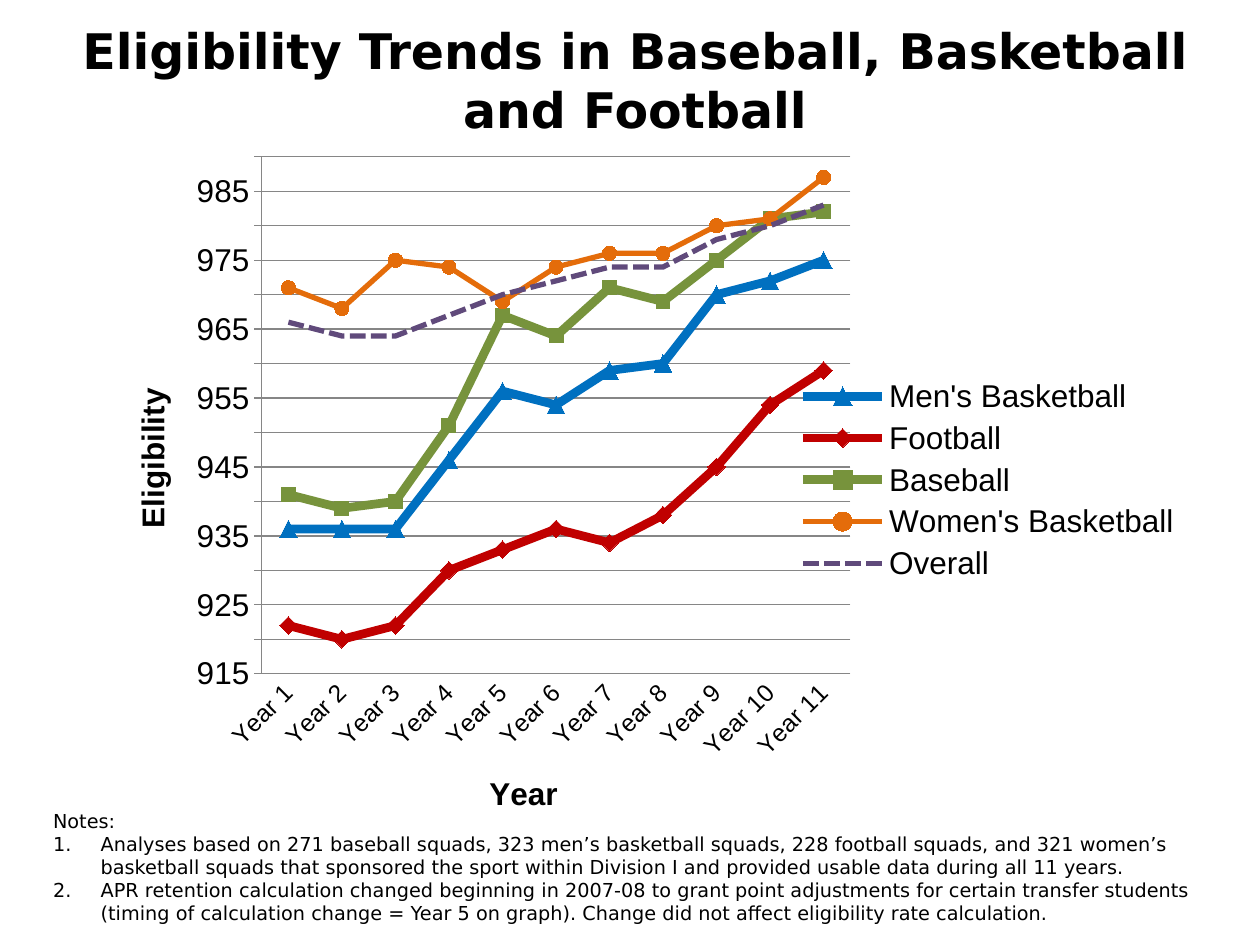
import pptx
import pptx.chart.data
import pptx.dml.color
import pptx.enum.chart
import pptx.enum.dml
import pptx.enum.text
import pptx.oxml
import pptx.oxml.ns
import pptx.util
from dataclasses import dataclass

Cm, Pt = pptx.util.Cm, pptx.util.Pt
RGBColor = pptx.dml.color.RGBColor
qn = pptx.oxml.ns.qn
Marker = pptx.enum.chart.XL_MARKER_STYLE


@dataclass(frozen=True)
class Theme:
    text_font: str = "DejaVu Sans"
    chart_font: str = "Arial"
    title_size: int = 28
    chart_size: int = 18
    category_size: int = 14
    note_size: int = 11
    black: str = "000000"
    grid: str = "868686"
    blue: str = "0070C0"
    red: str = "C00000"
    green: str = "77933C"
    orange: str = "E46C0A"
    purple: str = "604A7B"


theme = Theme()


def style_font(font, name, size, bold=False):
    values = {"name": name, "size": Pt(size), "bold": bold}
    for attribute, value in values.items():
        setattr(font, attribute, value)
    font.color.rgb = RGBColor.from_string(theme.black)


def add_text_box(left, top, width, height, margins, anchor):
    frame = slide.shapes.add_textbox(Cm(left), Cm(top), Cm(width), Cm(height)).text_frame
    values = {"word_wrap": True, "vertical_anchor": anchor}
    sides = ("margin_left", "margin_top", "margin_right", "margin_bottom")
    values.update(zip(sides, map(Cm, margins)))
    for attribute, value in values.items():
        setattr(frame, attribute, value)
    return frame


presentation = pptx.Presentation()
presentation.slide_width = Cm(25.4)
presentation.slide_height = Cm(19.05)
slide = presentation.slides.add_slide(presentation.slide_layouts[6])

# Title
anchors = pptx.enum.text.MSO_ANCHOR
title_frame = add_text_box(1.27, 0.43, 23.06, 2.34, (0.25, 0.13, 0.25, 0.13), anchors.MIDDLE)
paragraph = title_frame.paragraphs[0]
paragraph.text = "Eligibility Trends in Baseball, Basketball and Football"
paragraph.alignment = pptx.enum.text.PP_ALIGN.CENTER
style_font(paragraph.font, theme.text_font, theme.title_size, bold=True)

# Chart: name, values, colour, line width, marker, marker size
sports = [
    ("Men's Basketball", (936, 936, 936, 946, 956, 954, 959, 960, 970, 972, 975),
     theme.blue, 5, Marker.TRIANGLE, 10),
    ("Football", (922, 920, 922, 930, 933, 936, 934, 938, 945, 954, 959),
     theme.red, 5, Marker.DIAMOND, 10),
    ("Baseball", (941, 939, 940, 951, 967, 964, 971, 969, 975, 981, 982),
     theme.green, 5, Marker.SQUARE, 8),
    ("Women's Basketball", (971, 968, 975, 974, 969, 974, 976, 976, 980, 981, 987),
     theme.orange, 3, Marker.CIRCLE, 8),
    ("Overall", (966, 964, 964, 967, 970, 972, 974, 974, 978, 980, 983),
     theme.purple, 3, Marker.NONE, None),
]
chart_data = pptx.chart.data.CategoryChartData()
chart_data.categories = [f"Year {year}" for year in range(1, 12)]
for name, values, *_ in sports:
    chart_data.add_series(name, values)
chart = slide.shapes.add_chart(
    pptx.enum.chart.XL_CHART_TYPE.LINE_MARKERS,
    Cm(2.54), Cm(2.79), Cm(21.54), Cm(13.77), chart_data).chart
style_font(chart.font, theme.chart_font, theme.chart_size)
chart.has_title = False
chart.has_legend = True
chart.legend.position = pptx.enum.chart.XL_LEGEND_POSITION.RIGHT
chart.legend.include_in_layout = False
chart.plots[0].vary_by_categories = False

for series, (_, _, colour, width, marker, marker_size) in zip(chart.plots[0].series, sports):
    rgb = RGBColor.from_string(colour)
    series.smooth = False
    series.format.line.color.rgb = rgb
    series.format.line.width = Pt(width)
    series.marker.style = marker
    if marker == Marker.NONE:
        series.format.line.dash_style = pptx.enum.dml.MSO_LINE.SQUARE_DOT
        continue
    series.marker.size = marker_size
    series.marker.format.fill.solid()
    series.marker.format.fill.fore_color.rgb = rgb
    series.marker.format.line.color.rgb = rgb

# Axes
ticks = pptx.enum.chart.XL_TICK_MARK
category_axis, value_axis = chart.category_axis, chart.value_axis
axis_values = {"minimum_scale": 915, "maximum_scale": 990, "major_unit": 5}
for attribute, value in axis_values.items():
    setattr(value_axis, attribute, value)
axes = [
    (category_axis, "Year", ticks.NONE, theme.category_size),
    (value_axis, "Eligibility", ticks.OUTSIDE, theme.chart_size),
]
for axis, title, tick_mark, size in axes:
    axis.major_tick_mark = tick_mark
    axis.minor_tick_mark = ticks.NONE
    style_font(axis.tick_labels.font, theme.chart_font, size)
    paragraph = axis.axis_title.text_frame.paragraphs[0]
    paragraph.text = title
    style_font(paragraph.runs[0].font, theme.chart_font, theme.chart_size, bold=True)
value_axis.has_major_gridlines = True
for line in (category_axis.format.line, value_axis.format.line,
             value_axis.major_gridlines.format.line):
    line.color.rgb = RGBColor.from_string(theme.grid)
    line.width = Pt(0.75)

# Slanted year labels and an upright value title, in 1/60000 degree
label_body = category_axis._element.find(qn("c:txPr")).find(qn("a:bodyPr"))
title_body = value_axis.axis_title._element.find(".//" + qn("a:bodyPr"))
for body, degrees in ((label_body, -45), (title_body, -90)):
    body.set("rot", str(degrees * 60000))
    body.set("vert", "horz")

# Fixed inner plot area, as fractions of the chart
plot_area = chart._chartSpace.find(".//" + qn("c:plotArea"))
old_layout = plot_area.find(qn("c:layout"))
if old_layout is not None:
    plot_area.remove(old_layout)
layout_values = {"layoutTarget": "inner", "xMode": "edge", "yMode": "edge",
                 "x": 0.127, "y": 0.027, "w": 0.551, "h": 0.757}
layout_items = "".join(f'<c:{tag} val="{value}"/>' for tag, value in layout_values.items())
plot_area.insert(0, pptx.oxml.parse_xml(
    f'<c:layout xmlns:c="{pptx.oxml.ns.nsdecls("c").split(chr(34))[1]}">'
    f"<c:manualLayout>{layout_items}</c:manualLayout></c:layout>"))

# Notes
notes = [
    "Notes:",
    "Analyses based on 271 baseball squads, 323 men’s basketball squads, 228 football squads, "
    "and 321 women’s basketball squads that sponsored the sport within Division I and provided "
    "usable data during all 11 years.",
    "APR retention calculation changed beginning in 2007-08 to grant point adjustments for "
    "certain transfer students (timing of calculation change = Year 5 on graph). Change did not "
    "affect eligibility rate calculation.",
]
notes_frame = add_text_box(1.07, 16.31, 23.5, 2.7, (0, 0, 0.05, 0), anchors.TOP)
for index, note in enumerate(notes):
    paragraph = notes_frame.add_paragraph() if index else notes_frame.paragraphs[0]
    paragraph.text = note
    properties = paragraph._p.get_or_add_pPr()
    properties.set("marL", str(Cm(0.96)))
    properties.set("indent", str(-Cm(0.96)))
    if index:
        properties.append(pptx.oxml.parse_xml(
            f'<a:buAutoNum {pptx.oxml.ns.nsdecls("a")} type="arabicPeriod"/>'))
    style_font(paragraph.font, theme.text_font, theme.note_size)

presentation.save("out.pptx")
